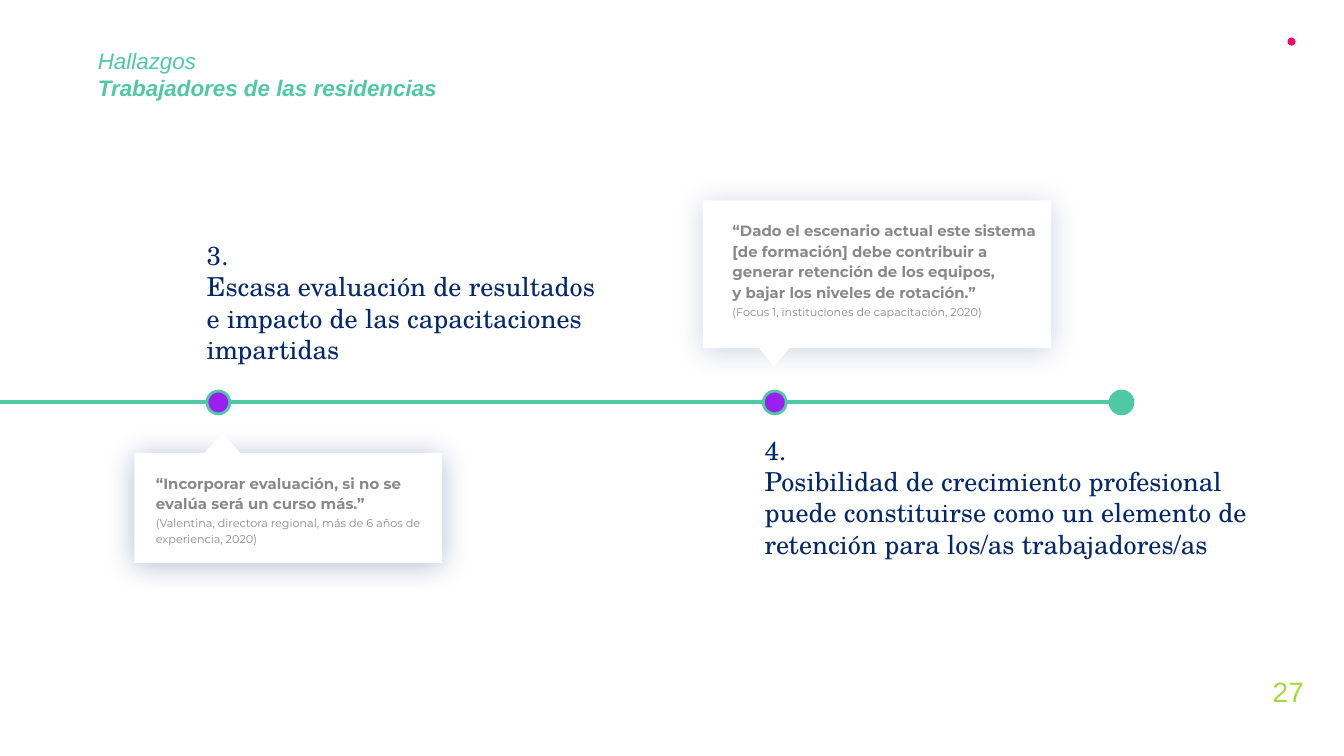
"""Build the findings timeline slide about care home workers."""
from dataclasses import dataclass

from lxml.etree import SubElement
from pptx import Presentation
from pptx.dml.color import RGBColor
from pptx.enum.shapes import MSO_CONNECTOR, MSO_SHAPE
from pptx.oxml.ns import qn
from pptx.util import Inches, Pt


@dataclass(frozen=True)
class Theme:
    green: str = "4FC9A3"
    purple: str = "9C1FF2"
    pink: str = "F20A66"
    lime: str = "A4DB3B"
    navy: str = "03286B"
    gray: str = "888888"
    white: str = "FFFFFF"
    sans: str = "Arial"
    serif: str = "TeX Gyre Schola"
    quote_font: str = "Montserrat"
    heading: int = 12
    number: int = 15
    finding: int = 14
    quote: int = 8
    source: int = 6


theme = Theme()


def add_text(box, lines, font_name, size, color, margins):
    """Add a text box at box, with one paragraph for each line."""
    text_box = slide.shapes.add_textbox(*map(Inches, box))
    frame = text_box.text_frame
    frame.word_wrap = True
    frame.margin_left, frame.margin_top, frame.margin_right, frame.margin_bottom = map(Inches, margins)
    for index, line in enumerate(lines):
        paragraph = frame.add_paragraph() if index else frame.paragraphs[0]
        paragraph.text = line
        paragraph.font.name = font_name
        paragraph.font.size = Pt(size)
        paragraph.font.color.rgb = RGBColor.from_string(color)
    return frame.paragraphs


def add_shape(shapes, kind, box, fill, outline=None):
    """Add a flat preset shape, outlined only when a colour is given."""
    shape = shapes.add_shape(kind, *map(Inches, box))
    shape.shadow.inherit = False
    shape.fill.solid()
    shape.fill.fore_color.rgb = RGBColor.from_string(fill)
    if outline:
        shape.line.color.rgb = RGBColor.from_string(outline)
        shape.line.width = Pt(1.5)
    else:
        shape.line.fill.background()
    return shape


presentation = Presentation()
presentation.slide_width = Inches(10)
presentation.slide_height = Inches(10) * 9 // 16
slide = presentation.slides.add_slide(presentation.slide_layouts[6])
even_margins = (0.1, 0.1, 0.1, 0.1)

heading = add_text((0.63, 0.25, 3.53, 0.43), ["Hallazgos", "Trabajadores de las residencias"],
                   theme.sans, theme.heading, theme.green, even_margins)
for paragraph in heading:
    paragraph.font.italic = True
heading[1].font.bold = True

add_text((9.47, 5.01, 0.24, 0.26), ["27"], theme.sans, theme.number, theme.lime, (0, 0.01, 0, 0))
add_shape(slide.shapes, MSO_SHAPE.OVAL, (9.58, 0.28, 0.06, 0.06), theme.pink)

timeline = slide.shapes.add_connector(
    MSO_CONNECTOR.STRAIGHT, Inches(-0.05), Inches(2.99), Inches(8.26), Inches(2.99))
timeline.line.color.rgb = RGBColor.from_string(theme.green)
timeline.line.width = Pt(2.25)
SubElement(timeline._element.spPr, qn("a:effectLst"))

for left, fill in ((1.54, theme.purple), (5.68, theme.purple), (8.26, theme.green)):
    add_shape(slide.shapes, MSO_SHAPE.OVAL, (left, 2.91, 0.17, 0.17), fill, theme.green)

findings = [
    ((1.44, 1.68, 3.47, 0.71),
     ["3.", "Escasa evaluación de resultados\ne impacto de las capacitaciones", "impartidas"]),
    ((5.59, 3.13, 4.05, 0.71),
     ["4.", "Posibilidad de crecimiento profesional puede constituirse como un elemento de "
            "retención para los/as trabajadores/as"]),
]
for box, lines in findings:
    add_text(box, lines, theme.serif, theme.finding, theme.navy, even_margins)

quotes = [
    ((1, 3.37, 2.29, 0.82), (1.48, 3.22, 0.35, 0.2), 0, 30, (1.16, 3.48, 2.08, 0.43),
     ["“Incorporar evaluación, si no se evalúa será un curso más.”",
      "(Valentina, directora regional, más de 6 años de experiencia, 2020)"]),
    ((5.23, 1.49, 2.59, 1.1), (5.6, 2.53, 0.32, 0.2), 180, 20, (5.45, 1.6, 2.29, 0.43),
     ["“Dado el escenario actual este sistema [de formación] debe contribuir a generar "
      "retención de los equipos,\ny bajar los niveles de rotación.”",
      "(Focus 1, instituciones de capacitación, 2020)"]),
]
for card_box, pointer_box, rotation, opacity, text_box, lines in quotes:
    group = slide.shapes.add_group_shape()
    card = add_shape(group.shapes, MSO_SHAPE.RECTANGLE, card_box, theme.white)
    pointer = add_shape(group.shapes, MSO_SHAPE.ISOSCELES_TRIANGLE, pointer_box, theme.white)
    card.rotation = pointer.rotation = rotation
    effects = card._element.spPr.find(qn("a:effectLst"))
    shadow = SubElement(effects, qn("a:outerShdw"), blurRad=str(Pt(15.8)), dist=str(Pt(1.5)),
                        dir=str(90 * 60000), algn="ctr", rotWithShape="0")
    shadow_color = SubElement(shadow, qn("a:srgbClr"), val=theme.navy)
    SubElement(shadow_color, qn("a:alpha"), val=str(opacity * 1000))

    quote, source = add_text(text_box, lines, theme.quote_font, theme.quote, theme.gray, (0, 0.03, 0, 0))
    quote.line_spacing = source.line_spacing = 1.15
    quote.font.bold = True
    source.space_before = Pt(1)
    source.font.size = Pt(theme.source)

presentation.save("out.pptx")
